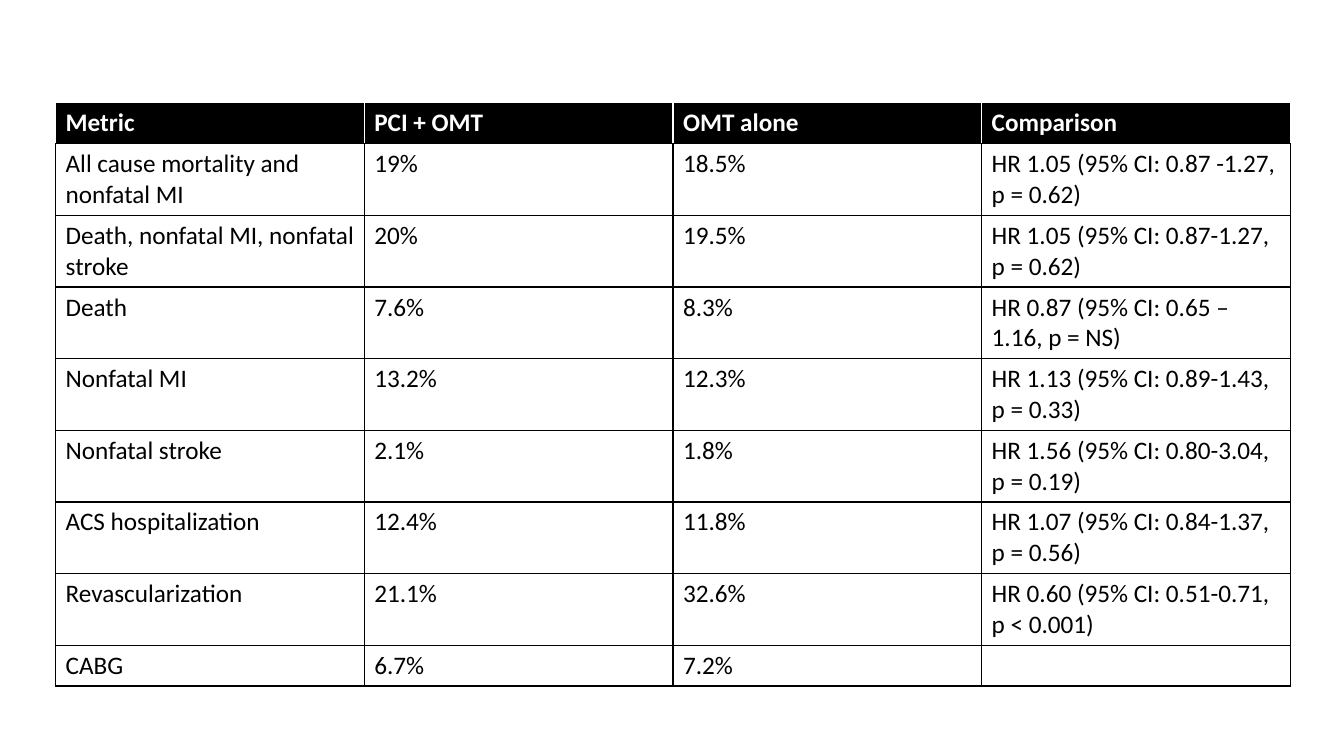
from lxml import etree
from pptx import Presentation, util as u
from pptx.dml.color import RGBColor
from pptx.oxml import ns


def color(hex_value):
    return RGBColor.from_string(hex_value)


def add_border(cell, position, side, hex_value):
    line = etree.Element(ns.qn(f"a:ln{side}"), w=str(u.Pt(1)))
    fill = etree.SubElement(line, ns.qn("a:solidFill"))
    etree.SubElement(fill, ns.qn("a:srgbClr"), val=hex_value)
    cell._tc.get_or_add_tcPr().insert(position, line)


BLACK, WHITE = "000000", "FFFFFF"
outcomes = [
    ("Metric", "PCI + OMT", "OMT alone", "Comparison"),
    ("All cause mortality and nonfatal MI", "19%", "18.5%", "HR 1.05 (95% CI: 0.87 -1.27, p = 0.62)"),
    ("Death, nonfatal MI, nonfatal stroke", "20%", "19.5%", "HR 1.05 (95% CI: 0.87-1.27, p = 0.62)"),
    ("Death", "7.6%", "8.3%", "HR 0.87 (95% CI: 0.65 – 1.16, p = NS)"),
    ("Nonfatal MI", "13.2%", "12.3%", "HR 1.13 (95% CI: 0.89-1.43, p = 0.33)"),
    ("Nonfatal stroke", "2.1%", "1.8%", "HR 1.56 (95% CI: 0.80-3.04, p = 0.19)"),
    ("ACS hospitalization", "12.4%", "11.8%", "HR 1.07 (95% CI: 0.84-1.37, p = 0.56)"),
    ("Revascularization", "21.1%", "32.6%", "HR 0.60 (95% CI: 0.51-0.71, p < 0.001)"),
    ("CABG", "6.7%", "7.2%", ""),
]

deck = Presentation()
deck.slide_width, deck.slide_height = u.Pt(960), u.Pt(540)
slide = deck.slides.add_slide(deck.slide_layouts[6])
results = slide.shapes.add_table(
    len(outcomes), 4, u.Pt(39.7), u.Pt(73.5), u.Pt(882), u.Pt(29.2 * len(outcomes))
).table
results.horz_banding = False

for row, outcome in enumerate(outcomes):
    header = row == 0
    background, ink = (BLACK, WHITE) if header else (WHITE, BLACK)
    text_format = {"name": "Calibri", "size": u.Pt(18), "bold": header}
    for column, wording in enumerate(outcome):
        cell = results.cell(row, column)
        cell.fill.solid()
        cell.fill.fore_color.rgb = color(background)
        for position, side in enumerate("LRTB"):
            add_border(cell, position, side, WHITE if header and side != "B" else BLACK)
        paragraph = cell.text_frame.paragraphs[0]
        paragraph.text = wording
        for attribute, value in text_format.items():
            setattr(paragraph.font, attribute, value)
        paragraph.font.color.rgb = color(ink)

deck.save("out.pptx")
